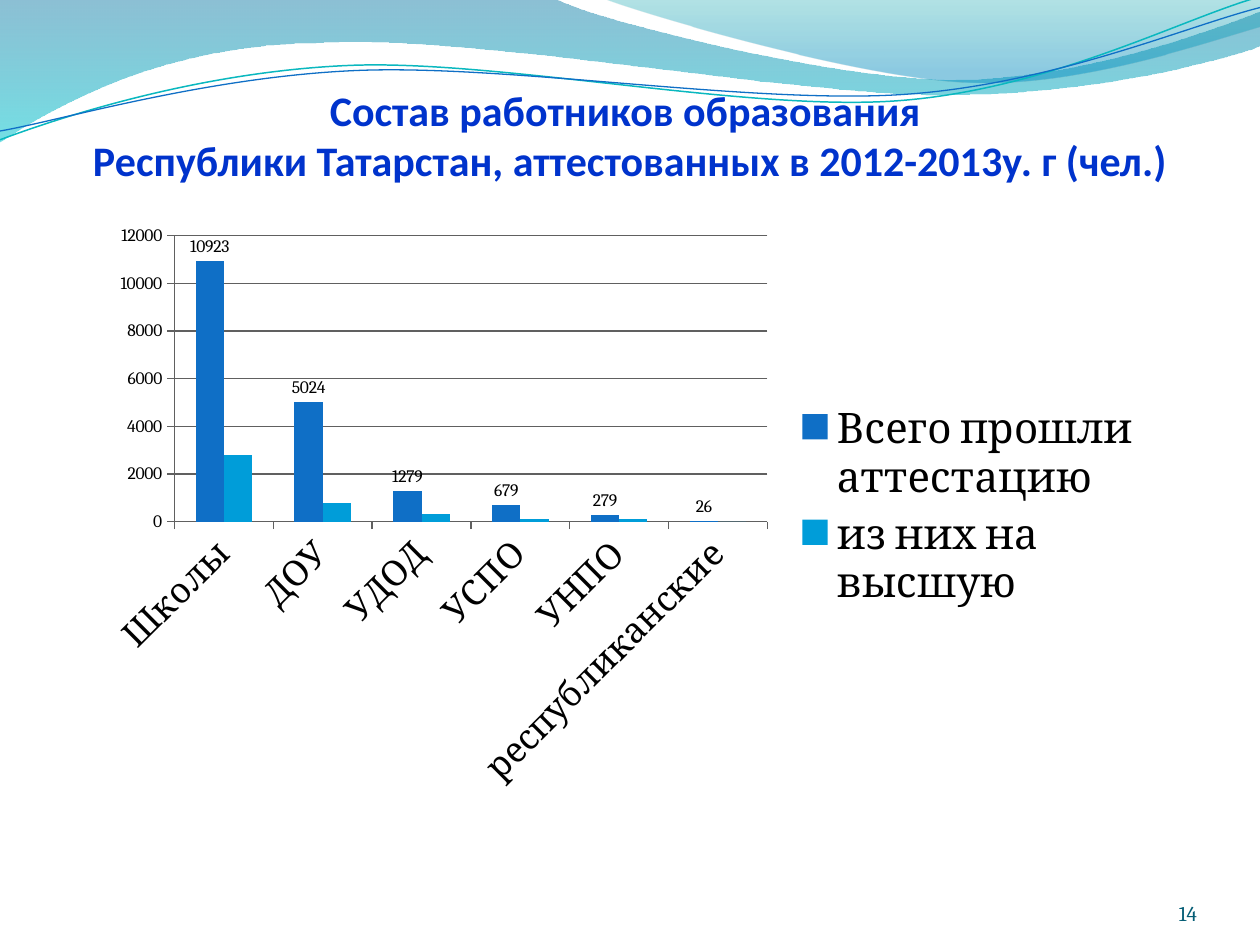
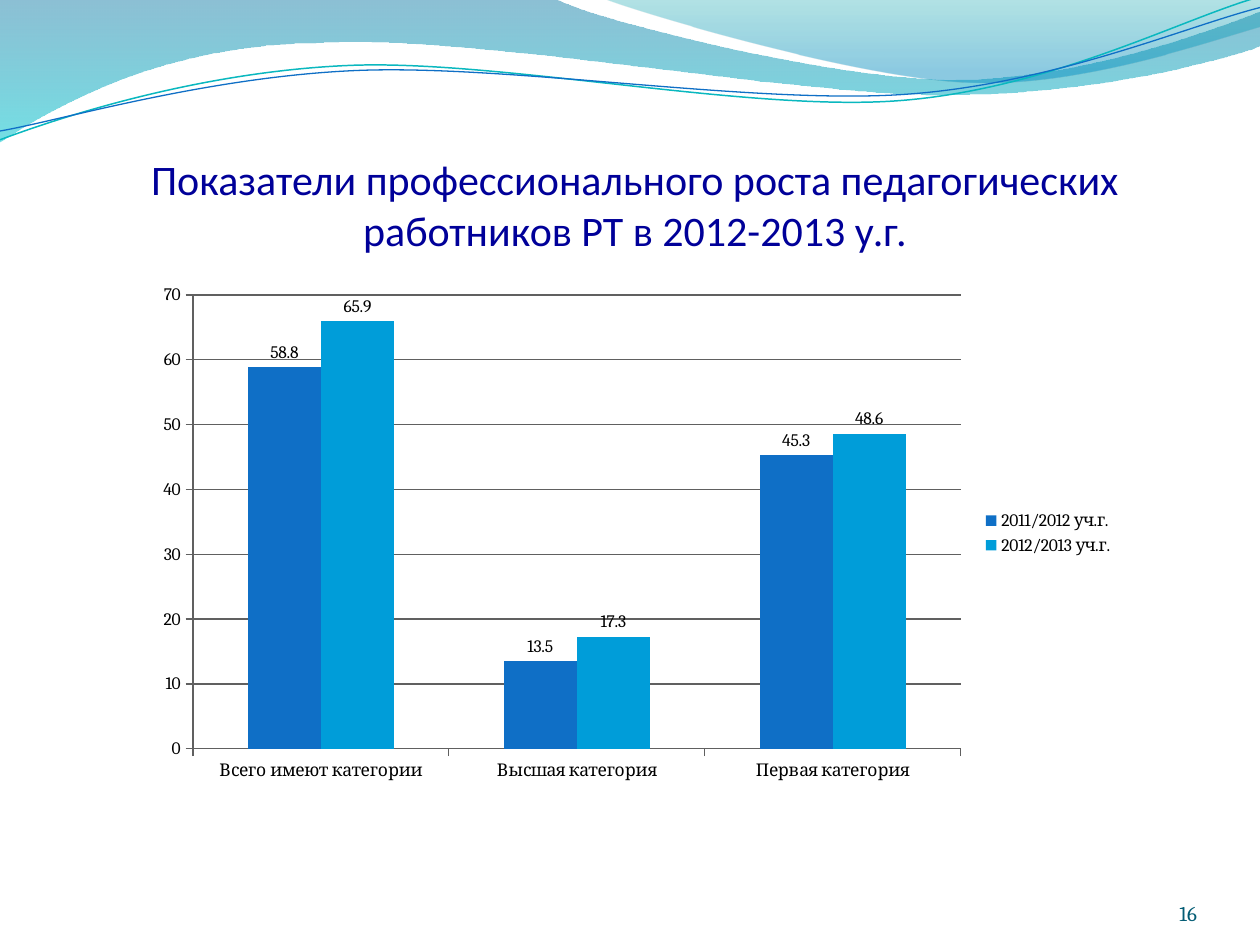
"""Two slides of column charts on teacher certification under a shared wave header."""
from lxml.etree import SubElement
from pptx import Presentation
from pptx.chart.data import CategoryChartData
from pptx.dml.color import RGBColor
from pptx.enum.chart import XL_CHART_TYPE as Chart, XL_LABEL_POSITION as LabelPos
from pptx.enum.chart import XL_LEGEND_POSITION as LegendPos, XL_TICK_MARK as Tick
from pptx.enum.text import MSO_ANCHOR as Anchor, MSO_AUTO_SIZE as AutoSize, PP_ALIGN as Align
from pptx.oxml.ns import qn
from pptx.util import Inches, Pt

COLORS = {
    "blue": "0F6FC6", "sky": "009DD9", "aqua": "0AB8BF", "number": "045D75",
    "title_bold": "0033CC", "title_plain": "000099", "text": "000000", "axis": "606060",
    "wave_top": "0074A1", "wave_end": "00C6CF", "crest_top": "00A1A9", "crest_end": "008BBF",
}
TITLE_FONT, BODY_FONT = "Calibri", "Cambria"
SERIES_COLORS = ("blue", "sky")

WAVES = [
    {"start": (0, -0.01),
     "steps": [(4.4, -0.01), (4.76, 0.17, 6.64, 0.63, 7.58, 0.63),
               (8.53, 0.63, 9.58, 0.26, 10, 0.09), (10.01, 0.36),
               (9.83, 0.44, 8.7, 0.76, 7.46, 0.75), (6.22, 0.75, 3.82, 0.28, 2.57, 0.34),
               (1.29, 0.35, 0.46, 0.83, -0.01, 1.13)],
     "stops": [(0, "wave_top", 45), (1, "wave_end", 55)]},
    {"start": (4.79, -0.01),
     "steps": [(5.09, 0.11, 6.82, 0.62, 7.69, 0.65), (8.56, 0.69, 9.61, 0.32, 10, 0.21), (10, 0)],
     "stops": [(0, "crest_top", 30), (0.8, "crest_end", 45)]},
    {"start": (0, 1.11),
     "steps": [(0.48, 0.93, 1.58, 0.57, 2.77, 0.52), (3.95, 0.47, 5.93, 0.89, 7.13, 0.8),
               (8.33, 0.71, 9.38, 0.15, 9.98, -0.02)],
     "line": ("aqua", 0.85)},
    {"start": (0, 1.04),
     "steps": [(0.47, 0.96, 1.64, 0.61, 2.83, 0.56), (4.03, 0.51, 5.97, 0.83, 7.17, 0.75),
               (8.36, 0.67, 9.41, 0.21, 10, 0.06)],
     "line": ("blue", 0.75)},
]

SLIDES = [
    {"number": "14",
     "title": ("Состав работников образования ",
               "Республики Татарстан, аттестованных в 2012-2013у. г (чел.)"),
     "title_box": (0, 0.5, 10, 0.97), "title_color": "title_bold", "bold": True,
     "chart_box": (0.75, 1.7, 8.43, 4.65),
     "cats": ["Школы", "ДОУ", "УДОД", "УСПО", "УНПО", "республиканские"],
     "series": [("Всего прошли аттестацию", (10923, 5024, 1279, 679, 279, 26)),
                ("из них на высшую", (2800, 800, 300, 100, 100, 0))],
     "labelled": 1, "cat_size": 20, "legend_size": 24},
    {"number": "16",
     "title": ("Показатели профессионального роста педагогических работников РТ в 2012-2013 у.г.",),
     "title_box": (0.5, 0.77, 9.08, 1.25), "title_color": "title_plain", "bold": False,
     "chart_box": (1.14, 2.18, 7.8, 4.1),
     "cats": ["Всего имеют категории", "Высшая категория", "Первая категория"],
     "series": [("2011/2012 уч.г.", (58.8, 13.5, 45.3)),
                ("2012/2013 уч.г.", (65.9, 17.3, 48.6))],
     "labelled": 2, "cat_size": 10, "legend_size": 10},
]


def rgb(name):
    return RGBColor.from_string(COLORS[name])


def box(values):
    return [Inches(v) for v in values]


def style(font, name, size, color, bold=False):
    font.name, font.size, font.bold = name, Pt(size), bold
    font.color.rgb = rgb(color)


def add_wave(s, wave):
    builder = s.shapes.build_freeform(*box(wave["start"]))
    for step in wave["steps"]:
        pts = [box(step[i:i + 2]) for i in range(0, len(step), 2)]
        builder.add_line_segments(pts, close=False)
    sp = builder.convert_to_shape()

    segments = iter(list(sp.element.iter(qn("a:lnTo"))))
    for step in wave["steps"]:
        group = [next(segments) for _ in range(len(step) // 2)]
        if len(group) == 3:
            curve = group[0].makeelement(qn("a:cubicBezTo"))
            group[0].addprevious(curve)
            for segment in group:
                curve.append(segment[0])
                segment.getparent().remove(segment)

    sp.shadow.inherit = False
    if "line" in wave:
        color, width = wave["line"]
        sp.fill.background()
        sp.line.color.rgb, sp.line.width = rgb(color), Pt(width)
        return sp
    SubElement(next(sp.element.iter(qn("a:moveTo"))).getparent(), qn("a:close"))
    sp.line.fill.background()
    sp.fill.gradient()
    sp.fill.gradient_angle = 270
    for stop, (pos, color, _) in zip(sp.fill.gradient_stops, wave["stops"]):
        stop.position, stop.color.rgb = pos, rgb(color)
    for clr, (_, _, opacity) in zip(sp.element.iter(qn("a:srgbClr")), wave["stops"]):
        SubElement(clr, qn("a:alpha"), val=str(opacity * 1000))
    return sp


def move_to_layout(sp, layout, number):
    next(sp.element.iter(qn("p:cNvPr"))).set("id", str(number))
    layout.shapes.element.append(sp.element)


def set_frame(tf, top=0.0):
    tf.word_wrap, tf.auto_size, tf.vertical_anchor = True, AutoSize.NONE, Anchor.BOTTOM
    tf.margin_left = tf.margin_right = tf.margin_bottom = 0
    tf.margin_top = Inches(top)


def add_title(s, data):
    sp = s.shapes.title
    sp.left, sp.top, sp.width, sp.height = box(data["title_box"])
    set_frame(sp.text_frame, 0.05)
    p = sp.text_frame.paragraphs[0]
    p.alignment = Align.CENTER
    for i, line in enumerate(data["title"]):
        if i:
            p.add_line_break()
        p.add_run().text = line
    style(p.font, TITLE_FONT, 24, data["title_color"], data["bold"])


def add_number(s, number):
    tf = s.shapes.add_textbox(*box((8.67, 6.95, 0.83, 0.4))).text_frame
    set_frame(tf)
    p = tf.paragraphs[0]
    p.text, p.alignment = number, Align.RIGHT
    style(p.font, BODY_FONT, 12, "number")


def add_columns(s, data):
    cd = CategoryChartData()
    cd.categories = data["cats"]
    for name, values in data["series"]:
        cd.add_series(name, values)
    chart = s.shapes.add_chart(Chart.COLUMN_CLUSTERED, *box(data["chart_box"]), cd).chart
    chart.has_title = False
    style(chart.font, BODY_FONT, 10, "text")

    chart.has_legend = True
    chart.legend.position, chart.legend.include_in_layout = LegendPos.RIGHT, False
    style(chart.legend.font, BODY_FONT, data["legend_size"], "text")

    cat, val = chart.category_axis, chart.value_axis
    val.has_major_gridlines = True
    for axis in (cat, val):
        axis.major_tick_mark = Tick.OUTSIDE
    for part in (cat, val, val.major_gridlines):
        part.format.line.color.rgb, part.format.line.width = rgb("axis"), Pt(0.75)
    style(cat.tick_labels.font, BODY_FONT, data["cat_size"], "text")

    plot = chart.plots[0]
    plot.gap_width, plot.overlap, plot.vary_by_categories = 150, 0, False
    for i, (series, color) in enumerate(zip(plot.series, SERIES_COLORS)):
        series.format.fill.solid()
        series.format.fill.fore_color.rgb = rgb(color)
        if i < data["labelled"]:
            labels = series.data_labels
            labels.show_value, labels.position = True, LabelPos.OUTSIDE_END
            style(labels.font, BODY_FONT, 10, "text")


def main():
    prs = Presentation()
    prs.slide_width, prs.slide_height = Inches(10), Inches(7.5)
    layout = prs.slide_layouts[5]
    for data in SLIDES:
        s = prs.slides.add_slide(layout)
        if data is SLIDES[0]:
            for number, wave in enumerate(WAVES, 101):
                move_to_layout(add_wave(s, wave), layout, number)
        add_title(s, data)
        add_columns(s, data)
        add_number(s, data["number"])
    prs.save("out.pptx")


if __name__ == "__main__":
    main()
